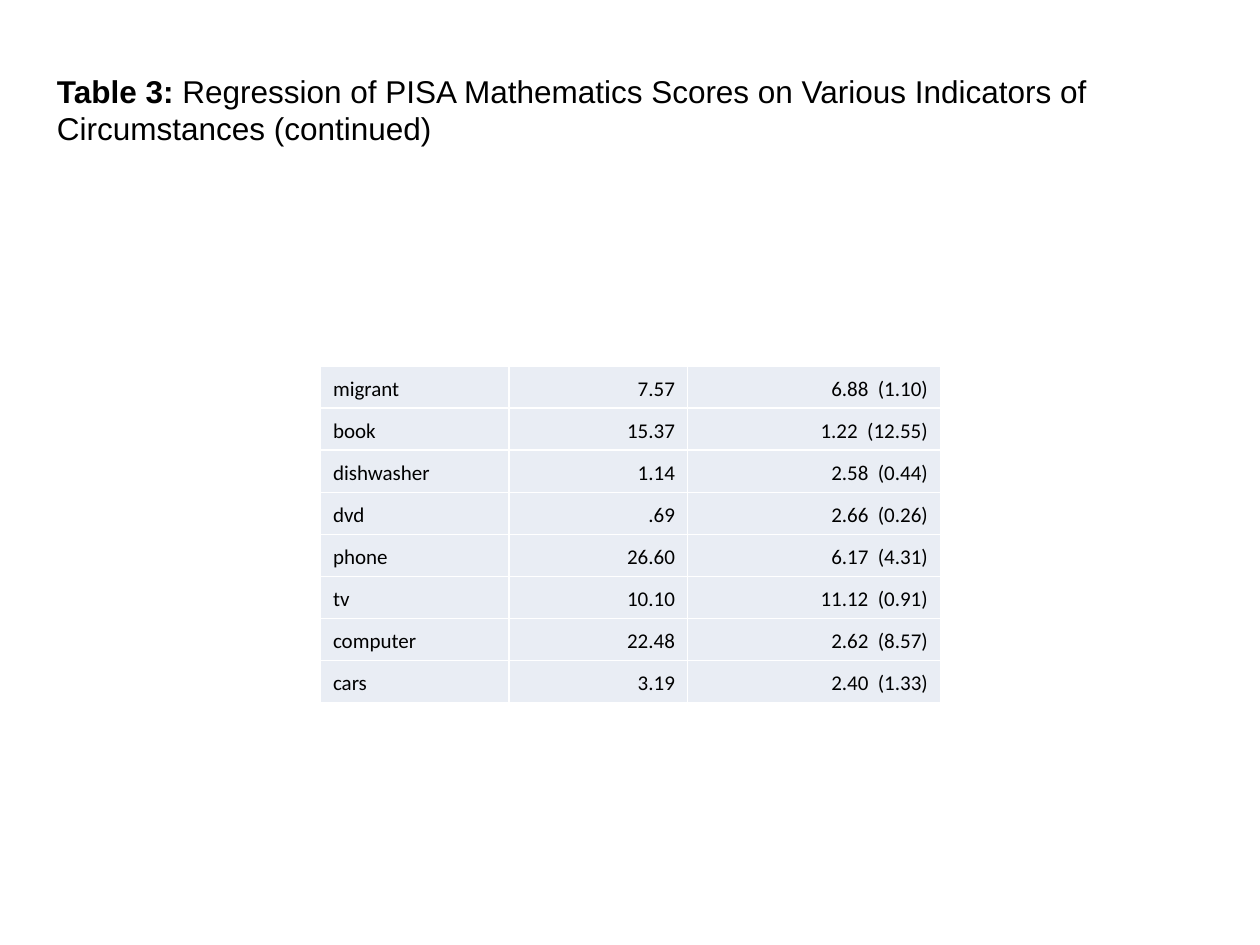
"""Build the slide with the continued regression table of PISA scores."""
from dataclasses import dataclass

from lxml.etree import SubElement as Sub
from pptx import Presentation
from pptx.dml.color import RGBColor as RGB
from pptx.enum.text import MSO_ANCHOR as Anchor, PP_ALIGN as Align
from pptx.oxml.ns import qn
from pptx.util import Cm, Pt


@dataclass(frozen=True)
class Theme:
    ink: str = "000000"
    fill: str = "E9EDF4"
    rule: str = "FFFFFF"
    head: int = 18
    body: int = 12
    sans: str = "Arial"
    cells: str = "Calibri"


theme = Theme()


def style(run, face, size, bold=False):
    font = run.font
    font.name, font.size, font.bold = face, Pt(size), bold
    font.color.rgb = RGB.from_string(theme.ink)


def frame(cell):
    props = cell._tc.get_or_add_tcPr()
    for i, side in enumerate(("lnL", "lnR", "lnT", "lnB")):
        line = props.makeelement(qn(f"a:{side}"), {"w": str(Pt(1))})
        fill = Sub(line, qn("a:solidFill"))
        Sub(fill, qn("a:srgbClr"), val=theme.rule)
        props.insert(i, line)


rows = [
    ("migrant", "7.57", "6.88  (1.10)"),
    ("book", "15.37", "1.22  (12.55)"),
    ("dishwasher", "1.14", "2.58  (0.44)"),
    ("dvd", ".69", "2.66  (0.26)"),
    ("phone", "26.60", "6.17  (4.31)"),
    ("tv", "10.10", "11.12  (0.91)"),
    ("computer", "22.48", "2.62  (8.57)"),
    ("cars", "3.19", "2.40  (1.33)"),
]
widths = [3.8, 3.6, 5.1]
height = 0.84

deck = Presentation()
deck.slide_width, deck.slide_height = Cm(25.4), Cm(19.05)
slide = deck.slides.add_slide(deck.slide_layouts[6])

table = slide.shapes.add_table(
    len(rows), len(widths), Cm(6.46), Cm(7.38),
    Cm(sum(widths)), Cm(height * len(rows))).table
table.first_row = table.horz_banding = False
for col, width in zip(table.columns, widths):
    col.width = Cm(width)
for r, row in enumerate(rows):
    table.rows[r].height = Cm(height)
    for c, text in enumerate(row):
        cell = table.cell(r, c)
        cell.vertical_anchor = Anchor.MIDDLE
        cell.fill.solid()
        cell.fill.fore_color.rgb = RGB.from_string(theme.fill)
        frame(cell)
        para = cell.text_frame.paragraphs[0]
        para.text = text
        para.alignment = Align.RIGHT if c else Align.LEFT
        para.line_spacing = 1.15
        style(para.runs[0], theme.cells, theme.body)

title = slide.shapes.add_textbox(Cm(0.9), Cm(1.32), Cm(23.4), Cm(1.8)).text_frame
title.word_wrap = True
para = title.paragraphs[0]
parts = [
    ("Table 3:", True),
    (" Regression of PISA Mathematics Scores on Various Indicators of "
     "Circumstances (continued)", False),
]
for text, bold in parts:
    run = para.add_run()
    run.text = text
    style(run, theme.sans, theme.head, bold)

deck.save("out.pptx")
